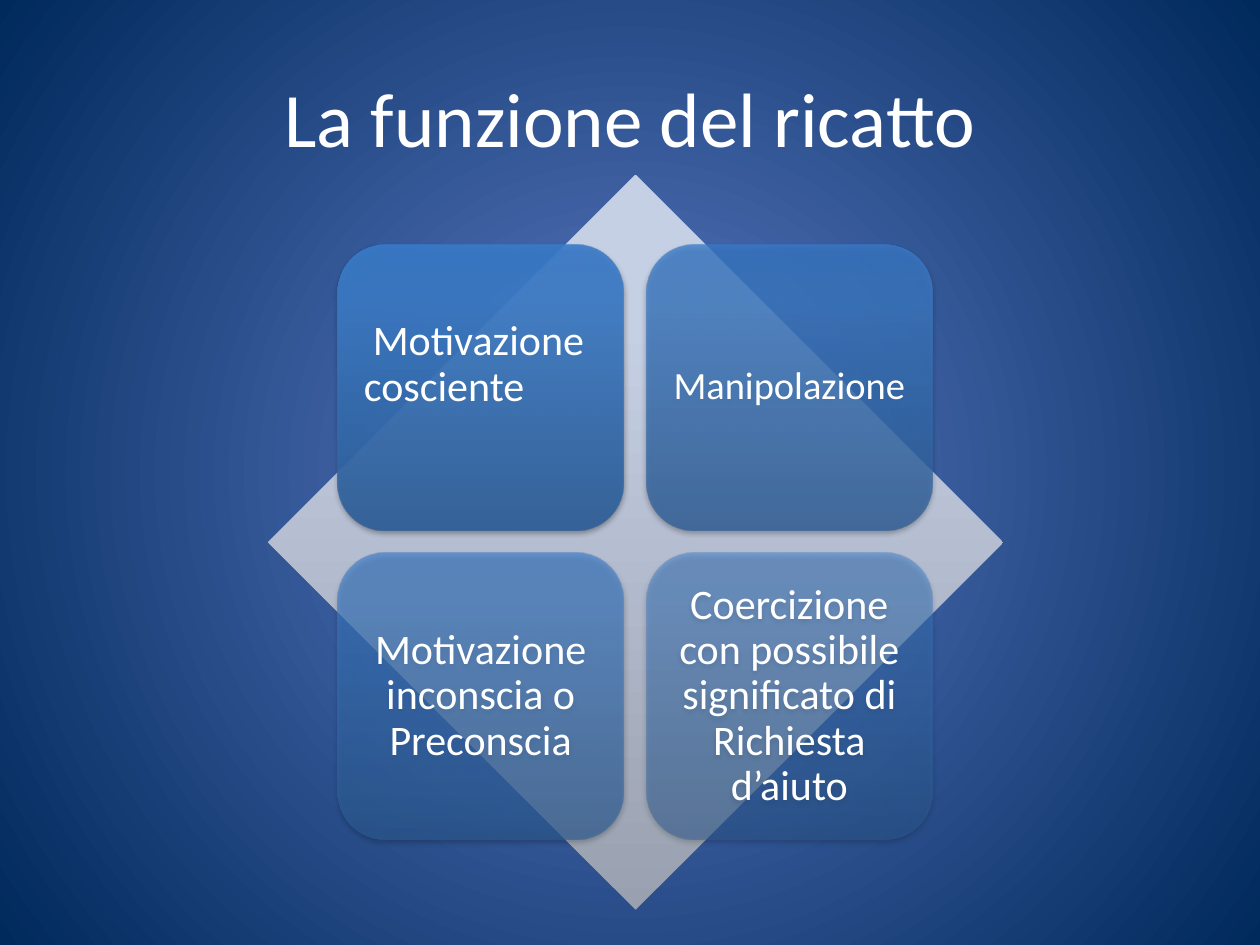
from lxml import etree
from pptx import Presentation
from pptx.dml.color import RGBColor as RGB
from pptx.enum.shapes import MSO_SHAPE as SHAPE
from pptx.enum.text import MSO_ANCHOR as ANCHOR, PP_ALIGN as ALIGN
from pptx.oxml.ns import qn
from pptx.util import Inches, Pt

WHITE = RGB(0xFF, 0xFF, 0xFF)
BLACK = RGB(0, 0, 0)
GLOW = RGB(0x5E, 0x7C, 0xC5)
NAVY = RGB(0x00, 0x29, 0x5C)
GREYS = [(0, RGB(0x99, 0xA0, 0xAF)), (80, RGB(0xC6, 0xD0, 0xE4)), (100, RGB(0xC7, 0xD1, 0xE5))]
BLUES = [(0, RGB(0x2F, 0x5F, 0x99)), (80, RGB(0x3D, 0x7C, 0xC7)), (100, RGB(0x3A, 0x7C, 0xCB))]


def shade(owner, fill, stops, alpha=100, radial=False):
    fill.gradient()
    grad = owner.element.find(".//" + qn("a:gradFill"))
    for child in list(grad):
        grad.remove(child)
    row = etree.SubElement(grad, qn("a:gsLst"))
    for pos, color in stops:
        stop = etree.SubElement(row, qn("a:gs"), pos=str(pos * 1000))
        tint = etree.SubElement(stop, qn("a:srgbClr"), val=str(color))
        if alpha < 100:
            etree.SubElement(tint, qn("a:alpha"), val=str(alpha * 1000))
    if radial:
        way = etree.SubElement(grad, qn("a:path"), path="circle")
        etree.SubElement(way, qn("a:fillToRect"), l="50000", t="50000", r="50000", b="50000")
    else:
        etree.SubElement(grad, qn("a:lin"), ang="16200000", scaled="0")


def write(shape, text, size=24, align=ALIGN.CENTER, pad=0.1, foot=0.1, space=0.9, after=0):
    frame = shape.text_frame
    frame.word_wrap = True
    frame.vertical_anchor = ANCHOR.MIDDLE
    frame.margin_left = frame.margin_right = frame.margin_top = Inches(pad)
    frame.margin_bottom = Inches(foot)
    para = frame.paragraphs[0]
    para.alignment = align
    para.line_spacing = space
    para.space_after = Pt(after)
    run = para.add_run()
    run.text = text
    run.font.name = "Calibri"
    run.font.size = Pt(size)
    run.font.color.rgb = WHITE
    return para


deck = Presentation()
deck.slide_width, deck.slide_height = Inches(10), Inches(7.5)
slide = deck.slides.add_slide(deck.slide_layouts[5])
shade(slide, slide.background.fill, [(0, GLOW), (100, NAVY)], radial=True)

title = slide.shapes.title
title.left, title.top = Inches(0.5), Inches(0.3)
title.width, title.height = Inches(9), Inches(1.25)
write(title, "La funzione del ricatto", size=44, space=1.0)

rhomb = slide.shapes.add_shape(SHAPE.DIAMOND, Inches(2.13), Inches(1.39), Inches(5.83), Inches(5.83))
rhomb.shadow.inherit = False
rhomb.line.fill.background()
shade(rhomb, rhomb.fill, GREYS)

SIDE, STEP = 2.27, 2.45
cards = [
    ("Motivazione cosciente", 90, dict(align=ALIGN.LEFT, foot=0.46)),
    ("Manipolazione", 77, dict(size=22, pad=0.09, foot=0.09)),
    ("Motivazione inconscia o Preconscia", 63, {}),
    ("Coercizione con possibile significato di Richiesta d’aiuto", 50, {}),
]
for i, (text, alpha, style) in enumerate(cards):
    row, col = divmod(i, 2)
    card = slide.shapes.add_shape(
        SHAPE.ROUNDED_RECTANGLE, Inches(2.68 + col * STEP), Inches(1.94 + row * STEP),
        Inches(SIDE), Inches(SIDE))
    card.line.fill.background()
    shade(card, card.fill, BLUES, alpha)
    card.shadow.inherit = False
    glow = etree.SubElement(
        card.element.spPr.find(qn("a:effectLst")), qn("a:outerShdw"),
        blurRad=str(Pt(3.1)), dist=str(Pt(1.8)), dir="5400000", rotWithShape="0")
    dark = etree.SubElement(glow, qn("a:srgbClr"), val=str(BLACK))
    etree.SubElement(dark, qn("a:alpha"), val="35000")
    para = write(card, text, **style)
    if style.get("align") == ALIGN.LEFT:
        para._p.get_or_add_pPr().set("indent", str(Inches(0.07)))

deck.save("out.pptx")
